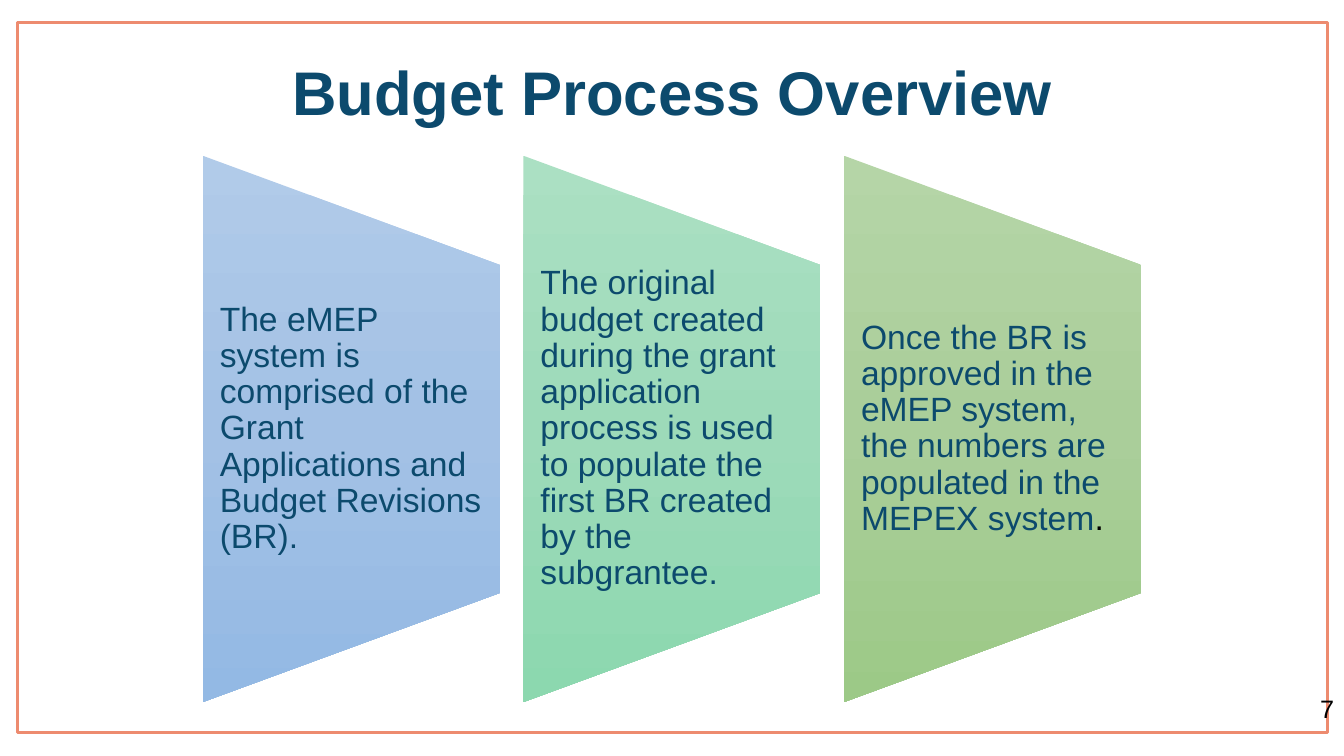
from copy import deepcopy

from pptx import Presentation
from pptx.dml.color import RGBColor
from pptx.enum.shapes import MSO_SHAPE as Preset
from pptx.enum.text import MSO_ANCHOR as Anchor, PP_ALIGN as Align
from pptx.util import Inches, Pt

WIDTH, HEIGHT = 13.33, 7.5
FRAME = (0.17, 0.22, 13, 7.05)


def color(value):
    return RGBColor.from_string(value)


class StepSlide:
    font, ink, accent = "Arial", "0C4A6D", "ED8B6F"
    left, pitch, column = 2.01, 3.18, 2.95
    middle, panel_height, text_height = 4.255, 5.42, 3.25

    def __init__(self, deck):
        self.slide = deck.slides.add_slide(deck.slide_layouts[5])
        self.shapes = self.slide.shapes

    def style(self, paragraph, size, ink=None, bold=False, align=Align.LEFT, spacing=None):
        paragraph.alignment = align
        paragraph.line_spacing = spacing
        paragraph.font.name = self.font
        paragraph.font.size = Pt(size)
        paragraph.font.bold = bold
        paragraph.font.color.rgb = color(ink or self.ink)

    def frame(self):
        border = self.shapes.add_shape(Preset.RECTANGLE, *map(Inches, FRAME))
        border.shadow.inherit = False
        border.fill.background()
        border.line.color.rgb = color(self.accent)
        border.line.width = Pt(2)

    def title(self, wording):
        heading = self.shapes.title
        left, top, width, _ = FRAME
        heading.left, heading.top = Inches(left), Inches(top)
        heading.width, heading.height = Inches(width), Inches(1.45)
        heading.text_frame.text = wording
        heading.text_frame.vertical_anchor = Anchor.MIDDLE
        self.style(heading.text_frame.paragraphs[0], 44, bold=True, align=Align.CENTER, spacing=0.9)

    def text(self, left, top, width, height):
        box = self.shapes.add_textbox(*map(Inches, (left, top, width, height)))
        box.text_frame.word_wrap = True
        return box.text_frame

    def panel(self, index, tints):
        center = self.left + index * self.pitch + self.column / 2
        panel = self.shapes.add_shape(
            Preset.FLOWCHART_MANUAL_OPERATION,
            Inches(center - self.panel_height / 2), Inches(self.middle - self.column / 2),
            Inches(self.panel_height), Inches(self.column))
        panel.rotation = 270
        panel.shadow.inherit = False
        panel.line.fill.background()
        panel.fill.gradient()
        panel.fill.gradient_angle = 270
        gradient = panel.element.spPr.find(".//{*}gradFill")
        gradient.set("rotWithShape", "0")
        stops = gradient.find("{*}gsLst")
        stops.insert(1, deepcopy(stops[0]))
        for stop, tint, position in zip(panel.fill.gradient_stops, tints, (0, 0.5, 1)):
            stop.color.rgb = color(tint)
            stop.position = position

    def step(self, index, wording, tints, ending=""):
        self.panel(index, tints)
        body = self.text(self.left + index * self.pitch, self.middle - self.text_height / 2,
                         self.column, self.text_height)
        body.vertical_anchor = Anchor.MIDDLE
        body.margin_left = body.margin_right = Inches(0.17)
        body.margin_top = body.margin_bottom = 0
        body.text = wording
        paragraph = body.paragraphs[0]
        self.style(paragraph, 24, spacing=0.9)
        if ending:
            mark = paragraph.add_run()
            mark.text = ending
            mark.font.color.rgb = color("000000")

    def number(self, value):
        width, height = 2.44, 0.5
        corner = self.text(WIDTH - width, 6.83, width, height)
        corner.text = value
        self.style(corner.paragraphs[0], 18, ink="000000", align=Align.RIGHT)


STEPS = [
    ("The eMEP system is comprised of the Grant Applications and Budget Revisions (BR).",
     ("B1CBE9", "A3C1E5", "93B9E4")),
    ("The original budget created during the grant application process is used to populate "
     "the first BR created by the subgrantee.",
     ("ABE0C3", "9DDAB9", "8CD8AF")),
    ("Once the BR is approved in the eMEP system, the numbers are populated in the MEPEX system",
     ("B5D5A7", "AACE9A", "9CC987"), "."),
]


def main():
    deck = Presentation()
    deck.slide_width, deck.slide_height = Inches(WIDTH), Inches(HEIGHT)
    overview = StepSlide(deck)
    overview.frame()
    overview.title("Budget Process Overview")
    for index, step in enumerate(STEPS):
        overview.step(index, *step)
    overview.number("7")
    deck.save("out.pptx")


if __name__ == "__main__":
    main()
